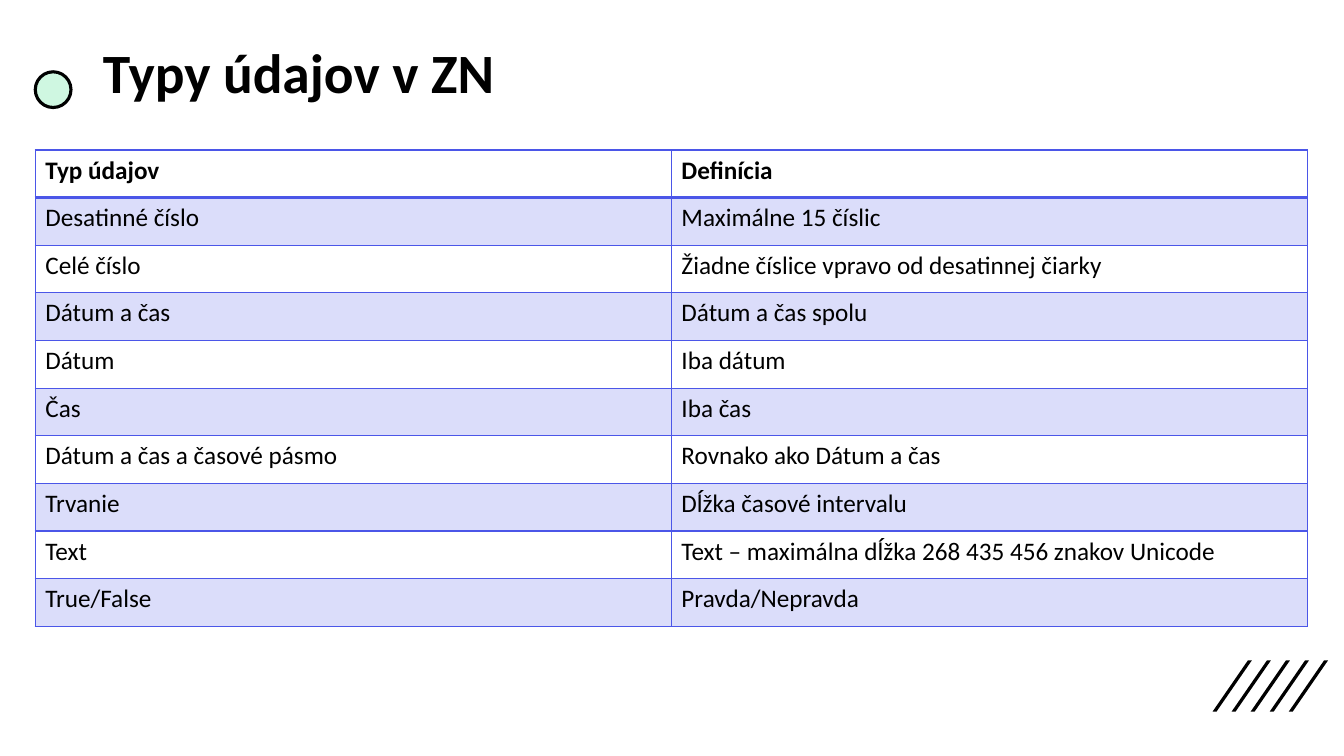
import pptx
import pptx.dml.color
import pptx.enum.shapes
import pptx.enum.text
import pptx.oxml
import pptx.oxml.ns
import pptx.util
from dataclasses import dataclass

Cm, Pt = pptx.util.Cm, pptx.util.Pt

TITLE = "Typy údajov v ZN"
HEADER = ("Typ údajov", "Definícia")
DATA_TYPES = [
    ("Desatinné číslo", "Maximálne 15 číslic"),
    ("Celé číslo", "Žiadne číslice vpravo od desatinnej čiarky"),
    ("Dátum a čas", "Dátum a čas spolu"),
    ("Dátum", "Iba dátum"),
    ("Čas", "Iba čas"),
    ("Dátum a čas a časové pásmo", "Rovnako ako Dátum a čas"),
    ("Trvanie", "Dĺžka časové intervalu"),
    ("Text", "Text – maximálna dĺžka 268 435 456 znakov Unicode"),
    ("True/False", "Pravda/Nepravda"),
]


@dataclass(frozen=True)
class Theme:
    font: str = "Calibri"
    ink: str = "000000"
    accent: str = "4B56E8"
    mint: str = "CFF7E1"
    band_alpha: int = 20
    title_size: float = 39.6
    cell_size: float = 18
    grid_line: float = 1
    header_line: float = 2
    dot_line: float = 2.25


THEME = Theme()
MARGIN = 0.89
TABLE_TOP, COLUMN_WIDTH, ROW_HEIGHT = 3.78, 16.03, 1.2
STRIPE_COUNT, STRIPE_LEFT, STRIPE_STEP = 5, 30.56, 0.48
STRIPE_TOP, STRIPE_BOTTOM = 16.64, 17.93
STRIPE_SLANT, STRIPE_WIDTH = 0.89, 0.1


def rgb(value):
    return pptx.dml.color.RGBColor.from_string(value)


def add_run(p, text, size, bold):
    r = p.add_run()
    r.text = text
    r.font.name = THEME.font
    r.font.size = Pt(size)
    r.font.bold = bold
    r.font.color.rgb = rgb(THEME.ink)


def add_stripes(shapes):
    for i in range(STRIPE_COUNT):
        left = STRIPE_LEFT + i * STRIPE_STEP
        top_left = left + STRIPE_SLANT
        builder = shapes.build_freeform(Cm(left + STRIPE_WIDTH), Cm(STRIPE_BOTTOM))
        builder.add_line_segments([
            (Cm(left), Cm(STRIPE_BOTTOM)),
            (Cm(top_left), Cm(STRIPE_TOP)),
            (Cm(top_left + STRIPE_WIDTH), Cm(STRIPE_TOP)),
        ], close=True)
        sp = builder.convert_to_shape()
        sp.shadow.inherit = False
        sp.fill.solid()
        sp.fill.fore_color.rgb = rgb(THEME.ink)
        sp.line.fill.background()


def add_dot(shapes):
    sp = shapes.add_shape(pptx.enum.shapes.MSO_SHAPE.OVAL,
                          Cm(MARGIN), Cm(1.81), Cm(0.9), Cm(0.9))
    sp.shadow.inherit = False
    sp.fill.solid()
    sp.fill.fore_color.rgb = rgb(THEME.mint)
    sp.line.color.rgb = rgb(THEME.ink)
    sp.line.width = Pt(THEME.dot_line)


def set_title(title):
    title.left, title.top, title.width, title.height = Cm(2.34), Cm(1.02), Cm(29.21), Cm(1.78)
    tf = title.text_frame
    tf.word_wrap = True
    tf.auto_size = pptx.enum.text.MSO_AUTO_SIZE.NONE
    tf.vertical_anchor = pptx.enum.text.MSO_ANCHOR.MIDDLE
    p = tf.paragraphs[0]
    p.alignment = pptx.enum.text.PP_ALIGN.LEFT
    p.line_spacing = 0.9
    add_run(p, TITLE, THEME.title_size, True)


def set_borders(cell, row):
    """Draw the cell's grid lines, heavier between the header and the body."""
    heavy_edge = {0: "lnB", 1: "lnT"}.get(row)
    tc_pr = cell._tc.get_or_add_tcPr()
    for edge in ("lnL", "lnR", "lnT", "lnB"):
        width = Pt(THEME.header_line if edge == heavy_edge else THEME.grid_line)
        tc_pr.append(pptx.oxml.parse_xml(
            f'<a:{edge} {pptx.oxml.ns.nsdecls("a")} w="{width}"><a:solidFill>'
            f'<a:srgbClr val="{THEME.accent}"/></a:solidFill></a:{edge}>'))


def set_band(cell, shaded):
    """Fill the cell with the translucent accent, or leave it clear."""
    if not shaded:
        cell.fill.background()
        return
    cell.fill.solid()
    cell.fill.fore_color.rgb = rgb(THEME.accent)
    color = cell._tc.tcPr.find(pptx.oxml.ns.qn("a:solidFill"))[0]
    color.append(pptx.oxml.parse_xml(
        f'<a:alpha {pptx.oxml.ns.nsdecls("a")} val="{THEME.band_alpha * 1000}"/>'))


def add_types_table(shapes):
    rows = [HEADER] + DATA_TYPES
    table = shapes.add_table(len(rows), len(HEADER), Cm(MARGIN), Cm(TABLE_TOP),
                             Cm(COLUMN_WIDTH * len(HEADER)),
                             Cm(ROW_HEIGHT * len(rows))).table
    for column in table.columns:
        column.width = Cm(COLUMN_WIDTH)
    for i, texts in enumerate(rows):
        table.rows[i].height = Cm(ROW_HEIGHT)
        for j, text in enumerate(texts):
            cell = table.cell(i, j)
            set_borders(cell, i)
            set_band(cell, i % 2 == 1)
            add_run(cell.text_frame.paragraphs[0], text, THEME.cell_size, i == 0)


def main():
    prs = pptx.Presentation()
    prs.slide_width, prs.slide_height = Cm(33.87), Cm(19.05)
    slide = prs.slides.add_slide(prs.slide_layouts.get_by_name("Title Only"))
    add_stripes(slide.shapes)
    add_dot(slide.shapes)
    set_title(slide.shapes.title)
    add_types_table(slide.shapes)
    prs.save("out.pptx")


if __name__ == "__main__":
    main()
